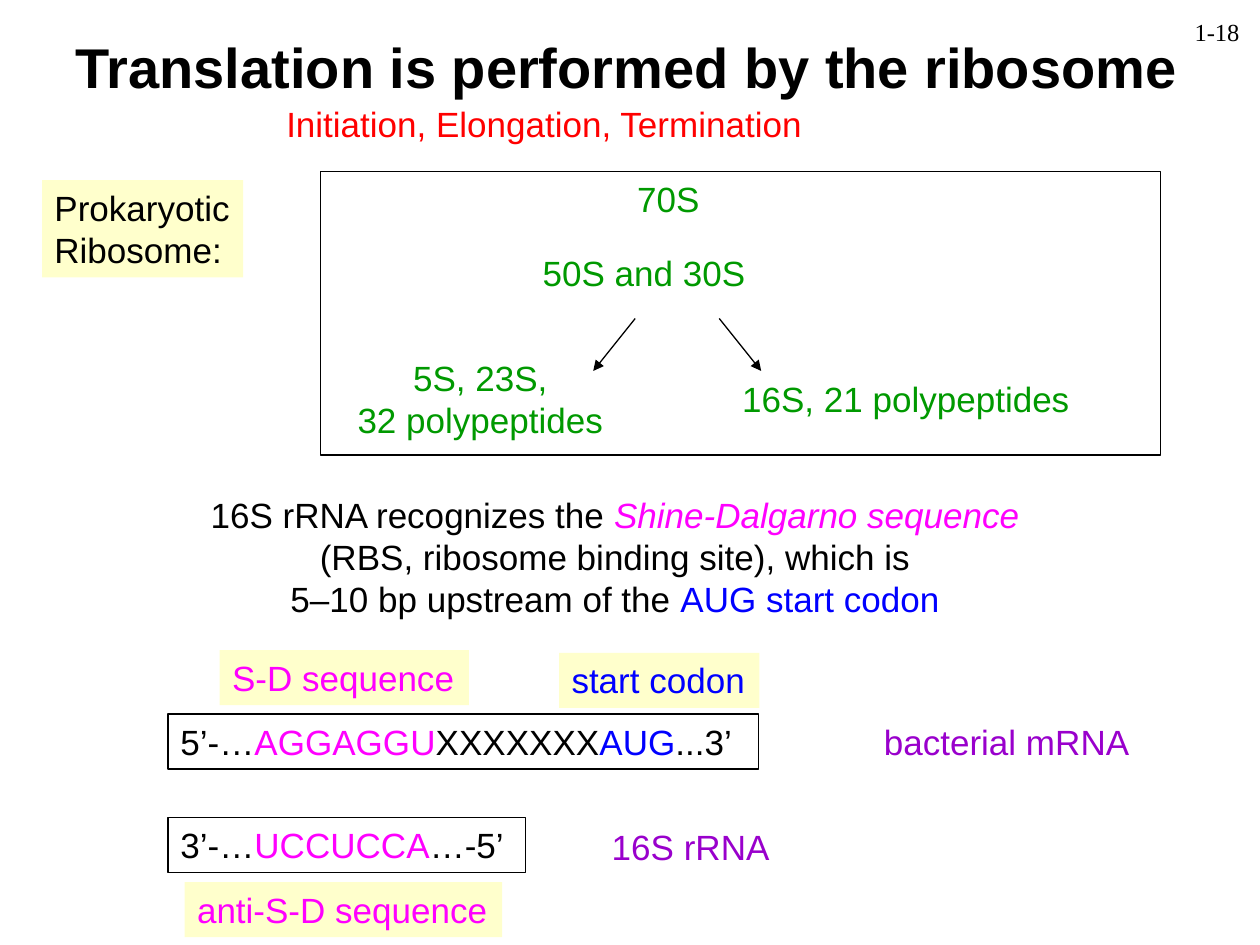
from lxml import etree
from pptx import Presentation
from pptx import util as u
from pptx.dml.color import RGBColor
from pptx.enum import shapes, text
from pptx.oxml import ns

BLACK = RGBColor(0x00, 0x00, 0x00)
RED = RGBColor(0xFF, 0x00, 0x00)
GREEN = RGBColor(0x00, 0x99, 0x00)
BLUE = RGBColor(0x00, 0x00, 0xFF)
MAGENTA = RGBColor(0xFF, 0x00, 0xFF)
PURPLE = RGBColor(0x99, 0x00, 0xCC)
CREAM = RGBColor(0xFF, 0xFF, 0xCC)

LINE_HEIGHT = 31.5
TWO_LINES = 55.5


def write(frame, lines, size=20, font="Arial", bold=False, align=text.PP_ALIGN.LEFT):
    frame.word_wrap = False
    frame.auto_size = text.MSO_AUTO_SIZE.SHAPE_TO_FIT_TEXT
    frame.vertical_anchor = text.MSO_ANCHOR.TOP
    for number, runs in enumerate(lines):
        para = frame.add_paragraph() if number else frame.paragraphs[0]
        para.alignment = align
        for words, color, *style in runs:
            span = para.add_run()
            span.text = words
            span.font.name = font
            span.font.size = u.Pt(size)
            span.font.bold = bold
            span.font.italic = "italic" in style
            span.font.color.rgb = color


def place(box, left, top, width, height):
    return [u.Pt(n) for n in (box[0] + left, box[1] + top, width, height)]


def add_label(page, area, lines, **style):
    label = page.shapes.add_textbox(*area)
    write(label.text_frame, lines, **style)
    label.left, label.top, label.width, label.height = area


def add_panel(page, area, lines=(), fill=None, line=None):
    panel = page.shapes.add_shape(shapes.MSO_SHAPE.RECTANGLE, *area)
    panel.shadow.inherit = False
    if fill is None:
        panel.fill.background()
    else:
        panel.fill.solid()
        panel.fill.fore_color.rgb = fill
    if line is None:
        panel.line.fill.background()
    else:
        panel.line.color.rgb = line
        panel.line.width = u.Pt(0.75)
    if lines:
        write(panel.text_frame, lines)


def add_arrow(page, box, start, end):
    points = [u.Pt(box[i] + point[i]) for point in (start, end) for i in (0, 1)]
    arrow = page.shapes.add_connector(shapes.MSO_CONNECTOR.STRAIGHT, *points)
    arrow.line.color.rgb = BLACK
    arrow.line.width = u.Pt(0.75)
    line = arrow.line._get_or_add_ln()
    etree.SubElement(line, ns.qn("a:tailEnd"), type="triangle")
    etree.SubElement(arrow._element.spPr, ns.qn("a:effectLst"))


def add_header(page, box):
    title = page.shapes.title
    title.left, title.top, title.width, title.height = place(box, 0, 0, 664.5, 45.5)
    write(title.text_frame, [[("Translation is performed by the ribosome", BLACK)]],
          size=32, bold=True)
    add_label(page, place(box, 120.5, 40, 312, LINE_HEIGHT),
              [[("Initiation, Elongation, Termination", RED)]])
    add_label(page, place(box, 639.5, -9, 42.5, 24), [[("1-18", BLACK)]],
              size=14, font="Times New Roman")


def add_ribosome(page, box):
    add_panel(page, place(box, 0, 5, 115, TWO_LINES),
              [[("Prokaryotic", BLACK)], [("Ribosome:", BLACK)]], fill=CREAM)
    tree = (box[0] + 159, box[1])
    add_panel(page, place(tree, 0, 0, 480, 162), line=BLACK)
    for words, left, top, width in (
        ("70S", 174, 0, 50.5),
        ("50S and 30S", 120, 42, 134),
        ("16S, 21 polypeptides", 234, 114, 203),
    ):
        add_label(page, place(tree, left, top, width, LINE_HEIGHT), [[(words, GREEN)]])
    add_label(page, place(tree, 13.5, 102, 156, TWO_LINES),
              [[("5S, 23S,", GREEN)], [("32 polypeptides", GREEN)]],
              align=text.PP_ALIGN.CENTER)
    for start, end in ((180, 156), (228, 252)):
        add_arrow(page, tree, (start, 84), (end, 114))


def add_explanation(page, box):
    add_label(page, place(box, 0, 0, 480, 80), [
        [("16S rRNA recognizes the ", BLACK),
         ("Shine-Dalgarno sequence", MAGENTA, "italic")],
        [("(RBS, ribosome binding site), which is", BLACK)],
        [("5–10 bp upstream of the ", BLACK), ("AUG start codon", BLUE)],
    ], align=text.PP_ALIGN.CENTER)


def add_sequences(page, box):
    strands = (
        (36.5, 337.5, [("5’-…", BLACK), ("AGGAGGU", MAGENTA), ("XXXXXXX", BLACK),
                       ("AUG", BLUE), ("...3’", BLACK)]),
        (95.5, 204.5, [("3’-…", BLACK), ("UCCUCCA", MAGENTA), ("…-5’", BLACK)]),
    )
    for top, width, runs in strands:
        add_panel(page, place(box, 0, top, width, LINE_HEIGHT), [runs], line=BLACK)
    for words, left, top, width in (
        ("bacterial mRNA", 402, 36.5, 156.5),
        ("16S rRNA", 246.5, 96.5, 108),
    ):
        add_label(page, place(box, left, top, width, LINE_HEIGHT), [[(words, PURPLE)]])
    for words, color, left, top, width in (
        ("S-D sequence", MAGENTA, 29.5, 0, 142.5),
        ("start codon", BLUE, 223.5, 1.5, 114.5),
        ("anti-S-D sequence", MAGENTA, 9.5, 132.5, 181.5),
    ):
        add_panel(page, place(box, left, top, width, LINE_HEIGHT),
                  [[(words, color)]], fill=CREAM)


def main():
    deck = Presentation()
    deck.slide_width, deck.slide_height = u.Pt(720), u.Pt(540)
    page = deck.slides.add_slide(deck.slide_layouts.get_by_name("Title Only"))
    add_header(page, (36, 15))
    add_ribosome(page, (24, 98))
    add_explanation(page, (111.5, 278.5))
    add_sequences(page, (96, 371.5))
    deck.save("out.pptx")


if __name__ == "__main__":
    main()
